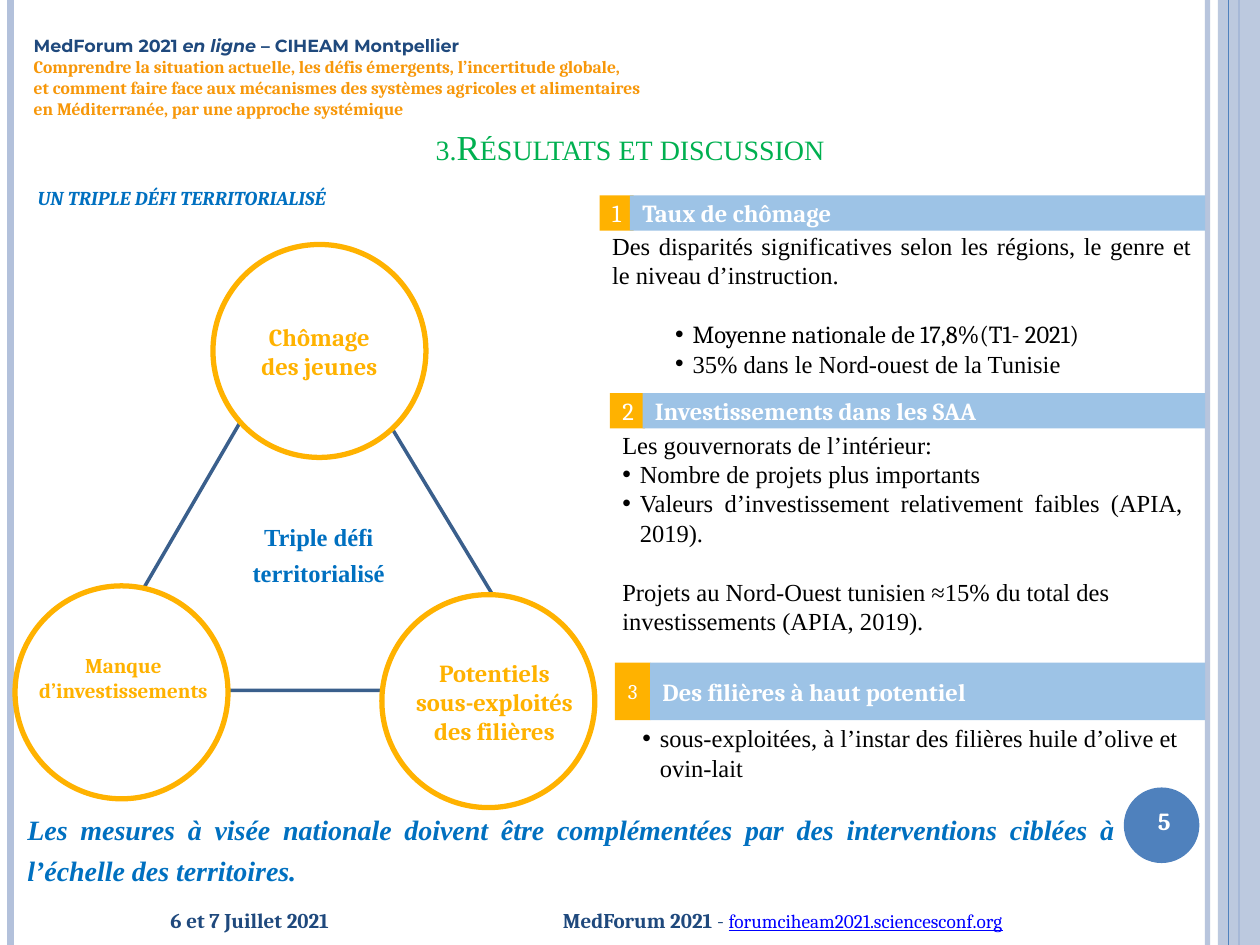
from pptx import Presentation
from pptx.dml.color import RGBColor
from pptx.enum.shapes import MSO_CONNECTOR as Connector, MSO_SHAPE as Shape
from pptx.enum.text import MSO_ANCHOR as Anchor, PP_ALIGN as Align
from pptx.oxml.ns import qn
from pptx.util import Pt
from lxml.etree import SubElement

THEME = {
    "white": "FFFFFF", "black": "000000", "navy": "1F497D", "blue": "0070C0",
    "steel": "4F81BD", "haze": "B3C1DB", "bar": "9DC3E6", "gold": "FFB200",
    "orange": "F79709", "green": "00B050", "link": "0000FF", "edge": "3A5F8C",
    "serif": "Times New Roman", "book": "Cambria", "sans": "Montserrat",
    "title": 20, "closing": 16, "body": 14, "small": 12, "web": 11, "head": 10,
}


def style(size, font, color, **more):
    return {"size": size, "font": font, "color": color, **more}


BODY = style("body", "serif", "black")
BOOK = style("body", "book", "black")
BAR = style("body", "book", "white", bold=True)
GOLD = style("body", "book", "gold", bold=True)
GOLD_SMALL = style("small", "book", "gold", bold=True)
HEAD = style("head", "sans", "navy", bold=True)
HEAD_THEME = style("head", "book", "orange", bold=True)
FOOT = style("small", "book", "navy", bold=True)
BLUE = style("body", "serif", "blue", bold=True)
CLOSING = style("closing", "serif", "blue", bold=True, italic=True)
SUBTITLE = style("body", "book", "blue", bold=True, italic=True, caps=True)
TITLE = style("title", "serif", "green", caps=True)
LINK = style("web", "book", "link", underline=True)


def para(text, look=BODY, **layout):
    """A paragraph: text (or a list of text and style pairs) and its layout."""
    spans = [(text, look)] if isinstance(text, str) else text
    return {"spans": spans, **layout}


# Content
JUST, CENTER = {"align": Align.JUSTIFY}, {"align": Align.CENTER}
LOOSE = {"spacing": 1.2, "after": 3}
GAP = 17  # one blank line of body text

HEADER = [
    para([("MedForum 2021 ", HEAD), ("en ligne ", {**HEAD, "italic": True}),
          ("– CIHEAM Montpellier", HEAD)]),
    para("Comprendre la situation actuelle, les défis émergents, l’incertitude globale,\n"
         "et comment faire face aux mécanismes des systèmes agricoles et alimentaires\n"
         "en Méditerranée, par une approche systémique", HEAD_THEME),
]
SITE = [para([("MedForum 2021 ", FOOT), ("- ", {**FOOT, "bold": False}),
              ("forumciheam2021.sciencesconf.org", LINK)])]

# Sections: left, top, badge width, height, bar left, number size, heading, body box, body
SECTIONS = [
    (342.7, 111.6, 19.4, 20.2, 360, "body", "Taux de chômage", (342.7, 128.2, 345.6, 92), [
        para("Des disparités significatives selon les régions, le genre et "
             "le niveau d’instruction.", **JUST),
        para("Moyenne nationale de 17,8%(T1- 2021)", BOOK, bullet=46, before=GAP),
        para("35% dans le Nord-ouest de la Tunisie", bullet=46)]),
    (348.5, 224.6, 20.2, 20.2, 367.2, "body", "Investissements dans les SAA",
     (348.5, 241.9, 334.8, 126), [
        para("Les gouvernorats de l’intérieur:", **JUST),
        para("Nombre de projets plus importants", bullet=10, **JUST),
        para("Valeurs d’investissement relativement faibles (APIA, 2019).", bullet=10, **JUST),
        para("Projets au Nord-Ouest tunisien ≈15% du total des investissements (APIA, 2019).",
             before=GAP)]),
    (351.4, 378.7, 20.2, 32.8, 371.5, "small", "Des filières à haut potentiel",
     (360, 409.7, 329, 41), [
        para("sous-exploitées, à l’instar des filières huile d’olive et ovin-lait", bullet=10)]),
]
BAR_RIGHT = 688.7

# Circles: left, top, text inside
DIAMETER = 121.7
CIRCLES = [
    (121.7, 139.7, [para("Chômage des jeunes", GOLD, **CENTER)]),
    (218.2, 339.8, []),
    (8.6, 334.8, []),
]

# Free text: box, paragraphs, anchor
TEXTS = [
    ((36.7, 510.5, 158.4, 30.2), [para("6 et 7 Juillet 2021", FOOT, align=Align.RIGHT)],
     Anchor.MIDDLE),
    ((314.6, 511.2, 370.8, 28.8), SITE, Anchor.MIDDLE),
    ((12.2, 16.6, 432.7, 55.4), HEADER, Anchor.TOP),
    ((49.7, 60.5, 620.6, 38.9), [para("3.Résultats et discussion", TITLE, **CENTER)],
     Anchor.BOTTOM),
    ((14.4, 96.5, 692, 25.9),
     [para("un triple défi territorialisé", SUBTITLE, **JUST, **LOOSE)], Anchor.TOP),
    ((654.5, 457.2, 22.3, 24.5), [para("5", BAR)], Anchor.TOP),
    ((8.6, 457.2, 635.8, 51.8),
     [para("Les mesures à visée nationale doivent être complémentées par des "
           "interventions ciblées à l’échelle des territoires.", CLOSING, **JUST, **LOOSE)],
     Anchor.TOP),
    ((115.9, 291.6, 132.5, 46.1),
     [para("Triple défi territorialisé", BLUE, **CENTER, **LOOSE)], Anchor.TOP),
    ((205.2, 372.2, 154.8, 58.3),
     [para(line, GOLD, **CENTER)
      for line in ("Potentiels", "sous-exploités", "des filières")], Anchor.TOP),
    ((4.3, 369.4, 132.5, 36), [para("Manque d’investissements", GOLD_SMALL, **CENTER)],
     Anchor.TOP),
]

deck = Presentation()
deck.slide_width, deck.slide_height = Pt(720), Pt(540)
page = deck.slides.add_slide(deck.slide_layouts[6])


def rgb(name):
    return RGBColor.from_string(THEME[name])


def set_alpha(shape, percent):
    color = shape._element.spPr.find(".//" + qn("a:srgbClr"))
    SubElement(color, qn("a:alpha"), val=str(percent * 1000))


def write(shape, paragraphs, anchor):
    frame = shape.text_frame
    frame.word_wrap = True
    frame.vertical_anchor = anchor
    for index, item in enumerate(paragraphs):
        paragraph = frame.paragraphs[0] if index == 0 else frame.add_paragraph()
        if "bullet" in item:
            props = paragraph._p.get_or_add_pPr()
            props.set("marL", str(Pt(item["bullet"])))
            props.set("indent", str(-Pt(10)))
            SubElement(props, qn("a:buFont"), typeface="Arial")
            SubElement(props, qn("a:buChar"), char="•")
        paragraph.alignment = item.get("align", Align.LEFT)
        paragraph.line_spacing = item.get("spacing", 1.0)
        paragraph.space_before = Pt(item.get("before", 0))
        paragraph.space_after = Pt(item.get("after", 0))
        for text, look in item["spans"]:
            for number, line in enumerate(text.split("\n")):
                if number:
                    paragraph.add_line_break()
                span = paragraph.add_run()
                span.text = line
                font = span.font
                font.size, font.name = Pt(THEME[look["size"]]), THEME[look["font"]]
                font.color.rgb = rgb(look["color"])
                font.bold, font.italic = look.get("bold", False), look.get("italic", False)
                font.underline = look.get("underline", False)
                if look.get("caps"):
                    span._r.get_or_add_rPr().set("cap", "small")


def add_shape(kind, box, fill=None, line=None, width=0, paragraphs=()):
    shape = page.shapes.add_shape(kind, *map(Pt, box))
    shape.shadow.inherit = False
    if fill:
        shape.fill.solid()
        shape.fill.fore_color.rgb = rgb(fill)
    else:
        shape.fill.background()
    if line:
        shape.line.color.rgb, shape.line.width = rgb(line), Pt(width)
    else:
        shape.line.fill.background()
    write(shape, paragraphs, Anchor.MIDDLE)
    return shape


def add_stripe(x, color, width):
    stripe = page.shapes.add_connector(Connector.STRAIGHT, Pt(x), 0, Pt(x), Pt(540))
    stripe.line.color.rgb, stripe.line.width = rgb(color), Pt(width)
    SubElement(stripe._element.spPr, qn("a:effectLst"))
    return stripe


# Page edges and number disc
set_alpha(add_stripe(690, "haze", 3), 93)
add_stripe(6, "haze", 4.5)
add_stripe(708, "steel", 1.5)
set_alpha(add_shape(Shape.RECTANGLE, (696, 0, 24, 540), "haze"), 87)
add_stripe(702, "steel", 0.75)
add_shape(Shape.OVAL, (642.2, 450, 43.2, 43.2), "steel")

# Numbered sections
for number, section in enumerate(SECTIONS, 1):
    left, top, width, height, bar_left, size, heading, body_box, body = section
    badge = para(str(number), style(size, "book", "white"), **CENTER)
    add_shape(Shape.RECTANGLE, (left, top, width, height), "gold", paragraphs=[badge])
    add_shape(Shape.RECTANGLE, (bar_left, top, BAR_RIGHT - bar_left, height), "bar",
              paragraphs=[para(heading, BAR)])
    write(page.shapes.add_textbox(*map(Pt, body_box)), body, Anchor.TOP)

# Triangle of challenges
triangle = add_shape(Shape.ISOSCELES_TRIANGLE, (48.2, 169.9, 266.4, 224.6),
                     line="edge", width=2)
triangle.adjustments[0] = 0.49
for left, top, label in CIRCLES:
    add_shape(Shape.OVAL, (left, top, DIAMETER, DIAMETER), "white", "gold", 3, label)

# Titles, labels and footer
for box, paragraphs, anchor in TEXTS:
    write(page.shapes.add_textbox(*map(Pt, box)), paragraphs, anchor)

deck.save("out.pptx")
